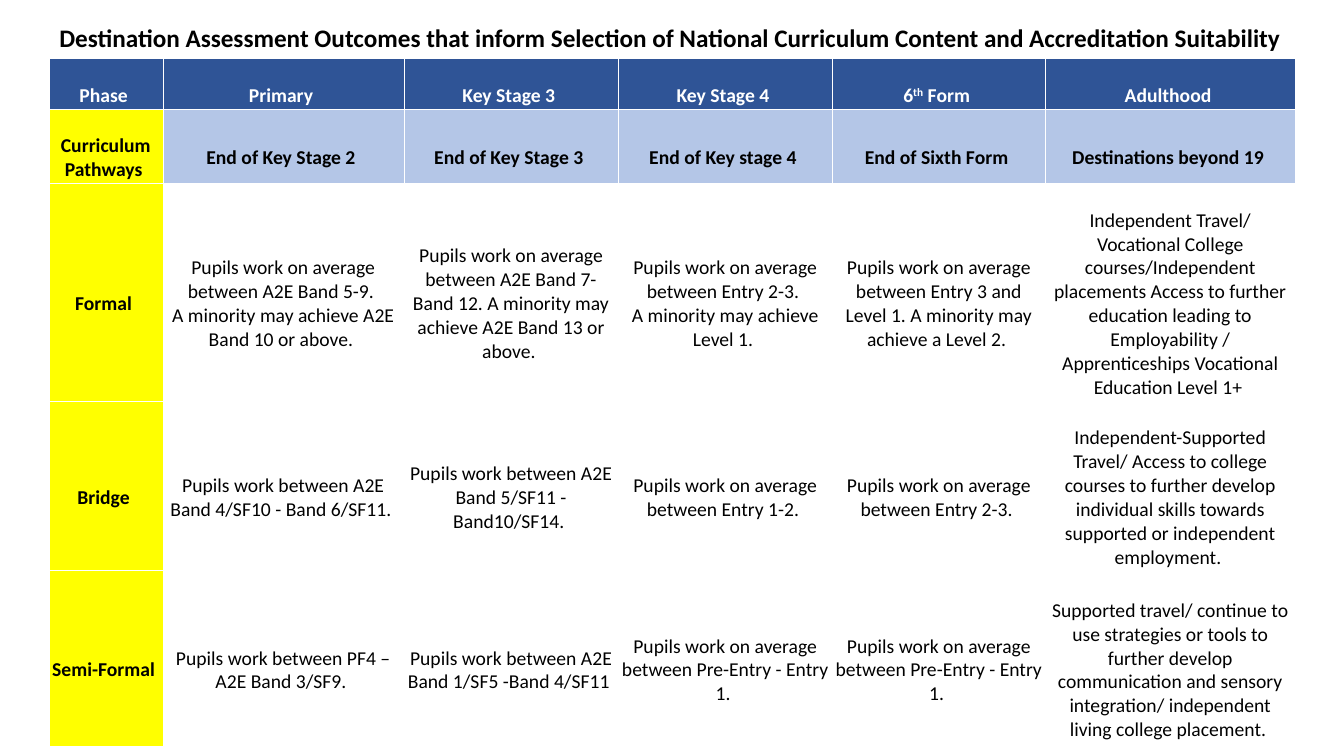
import pptx
import pptx.dml.color
import pptx.enum.text
import pptx.oxml
import pptx.oxml.ns
import pptx.util

Pt = pptx.util.Pt
NBSP = chr(160)  # each table paragraph ends in a hard space


def rgb(value):
    return pptx.dml.color.RGBColor.from_string(value)


def add_run(p, text, size, color, bold):
    r = p.add_run()
    r.text = text
    r.font.name = "Calibri"
    r.font.size = Pt(size)
    r.font.bold = bold
    r.font.color.rgb = rgb(color)
    return r


prs = pptx.Presentation()
prs.slide_width, prs.slide_height = Pt(960), Pt(540)
s = prs.slides.add_slide(prs.slide_layouts[6])

# Table content: a line break starts a new paragraph, ^ encloses a superscript
rows = [
    ["Phase", "Primary", "Key Stage 3", "Key Stage 4", "6^th^ Form", "Adulthood"],
    ["Curriculum Pathways", "End of Key Stage 2", "End of Key Stage 3",
     "End of Key stage 4", "End of Sixth Form", "Destinations beyond 19"],
    ["Formal",
     "Pupils work on average between A2E Band 5-9.\n"
     "A minority may achieve A2E Band 10 or above.",
     "Pupils work on average between A2E Band 7- Band 12. "
     "A minority may achieve A2E Band 13 or above.",
     "Pupils work on average between Entry 2-3.\nA minority may achieve Level 1.",
     "Pupils work on average between Entry 3 and Level 1. "
     "A minority may achieve a Level 2.",
     "Independent Travel/ Vocational College courses/Independent placements "
     "Access to further education leading to Employability / "
     "Apprenticeships Vocational Education Level 1+"],
    ["Bridge",
     "Pupils work between A2E Band 4/SF10 - Band 6/SF11.",
     "Pupils work between A2E Band 5/SF11 - Band10/SF14.",
     "Pupils work on average between Entry 1-2.",
     "Pupils work on average between Entry 2-3.",
     "Independent-Supported Travel/ Access to college courses to further develop "
     "individual skills towards supported or independent employment."],
    ["Semi-Formal",
     "Pupils work between PF4 – A2E Band 3/SF9.",
     "Pupils work between A2E Band 1/SF5 -Band 4/SF11",
     "Pupils work on average between Pre-Entry - Entry 1.",
     "Pupils work on average between Pre-Entry - Entry 1.",
     "Supported travel/ continue to use strategies or tools to further develop "
     "communication and sensory integration/ independent living college placement."],
]
col_widths = [81.4, 172.1, 153.4, 152.6, 152.6, 178]
row_heights = [36, 53, 155.5, 121.3, 125.3]

# Table grid
frame = s.shapes.add_table(len(rows), len(col_widths), Pt(34.9), Pt(41.8),
                           Pt(sum(col_widths)), Pt(sum(row_heights)))
table = frame.table
table.first_row = table.horz_banding = False
for column, width in zip(table.columns, col_widths):
    column.width = Pt(width)
for row, height in zip(table.rows, row_heights):
    row.height = Pt(height)

# Cells
for i, texts in enumerate(rows):
    for j, text in enumerate(texts):
        cell = table.cell(i, j)
        cell.vertical_anchor = pptx.enum.text.MSO_ANCHOR.MIDDLE
        cell.margin_left = cell.margin_right = Pt(1.4)
        cell.margin_top, cell.margin_bottom = Pt(17.8), Pt(0.7)

        # White borders go before the fill in the cell properties
        tcPr = cell._tc.get_or_add_tcPr()
        for side in ("lnL", "lnR", "lnT", "lnB"):
            tcPr.append(pptx.oxml.parse_xml(
                f'<a:{side} {pptx.oxml.ns.nsdecls("a")} w="4763"><a:solidFill>'
                f'<a:srgbClr val="FFFFFF"/></a:solidFill></a:{side}>'))

        fill = "2F5496" if i == 0 else "FFFF00" if j == 0 else "B4C6E7" if i == 1 else None
        if fill:
            cell.fill.solid()
            cell.fill.fore_color.rgb = rgb(fill)
        else:
            cell.fill.background()

        tf = cell.text_frame
        for k, line in enumerate(text.split("\n")):
            p = tf.add_paragraph() if k else tf.paragraphs[0]
            p.alignment = pptx.enum.text.PP_ALIGN.CENTER
            for n, part in enumerate((line + NBSP).split("^")):
                r = add_run(p, part, 14, "FFFFFF" if i == 0 else "000000", i < 2 or j == 0)
                if n % 2:
                    r.font._element.set("baseline", "30000")

# Title
title = s.shapes.add_textbox(Pt(35.3), Pt(12.2), Pt(890.6), Pt(29))
tf = title.text_frame
tf.word_wrap = True
add_run(tf.paragraphs[0],
        "Destination Assessment Outcomes that inform Selection of National "
        "Curriculum Content and Accreditation Suitability", 18, "000000", True)

prs.save("out.pptx")
